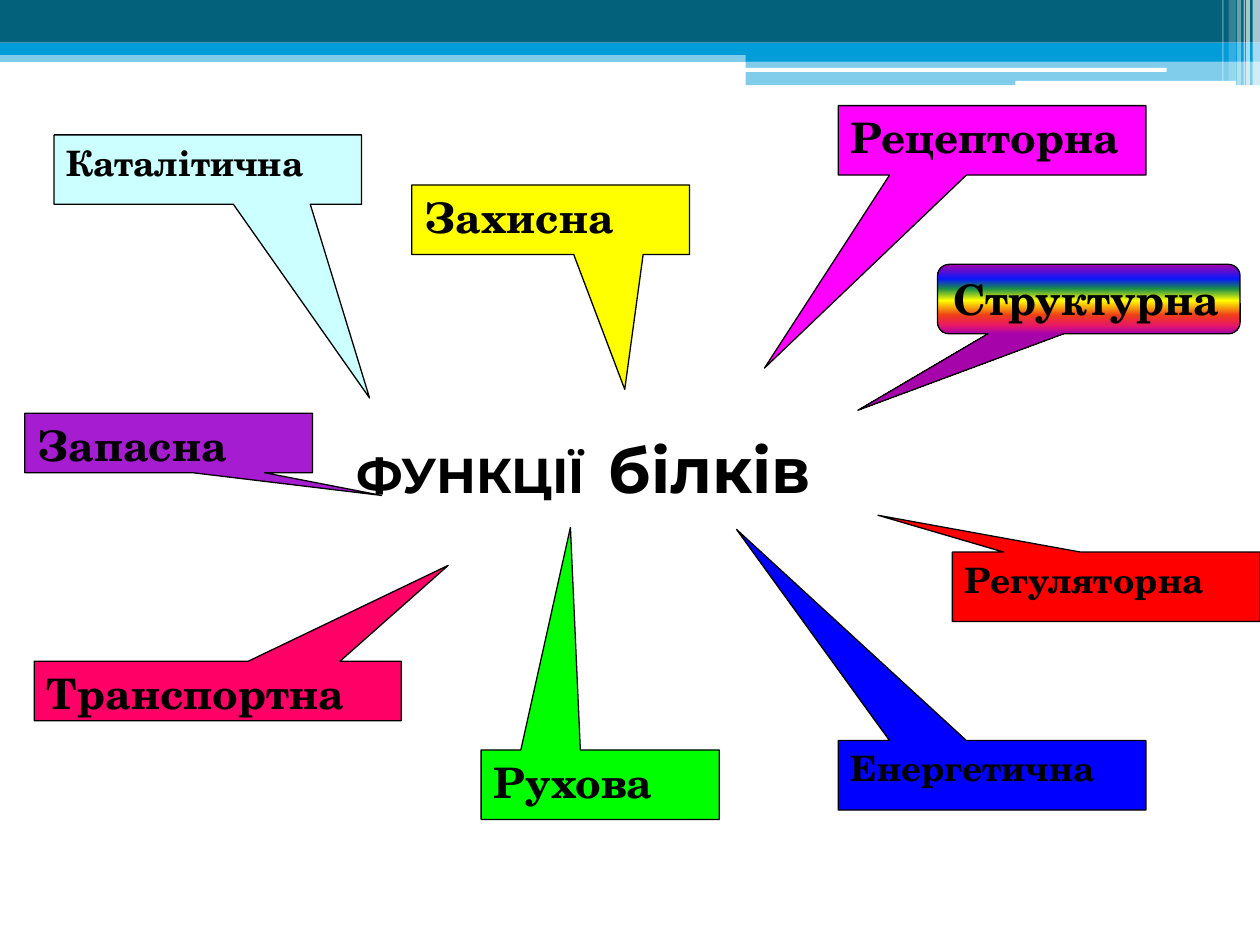
from lxml import etree
from pptx import Presentation
from pptx.dml.color import RGBColor
from pptx.enum import shapes, text
from pptx.oxml import ns
from pptx.util import Cm, Pt

SLIDE_WIDTH, SLIDE_HEIGHT = 25.4, 19.05
BLACK, WHITE = "000000", "FFFFFF"
DARK_TEAL, BLUE = "04617B", "009DD9"
RECT = shapes.MSO_SHAPE.RECTANGLE
ROUNDED = shapes.MSO_SHAPE.ROUNDED_RECTANGLE
CALLOUT = shapes.MSO_SHAPE.RECTANGULAR_CALLOUT
ROUNDED_CALLOUT = shapes.MSO_SHAPE.ROUNDED_RECTANGULAR_CALLOUT

# kind, left, top, width, height, colour, opacity in percent
HEADER_BANDS = [
    (RECT, 0, 1.02, 25.4, 0.23, BLUE, 50),
    (RECT, 0, 0, 25.4, 0.86, DARK_TEAL, 100),
    (RECT, 0, 0.86, 25.4, 0.25, BLUE, 100),
    (RECT, 15.03, 0.99, 10.37, 0.25, BLUE, 100),
    (RECT, 15.03, 1.22, 10.37, 0.5, BLUE, 50),
    (ROUNDED, 15.01, 1.37, 8.51, 0.08, WHITE, 100),
    (ROUNDED, 20.47, 1.63, 4.45, 0.1, WHITE, 100),
]
# left, width, height, opacity in percent
CORNER_STRIPES = [
    (25.25, 0.15, 1.73, 65),
    (25.12, 0.08, 1.73, 65),
    (25.07, 0.03, 1.73, 60),
    (24.94, 0.08, 1.73, 40),
    (24.77, 0.15, 1.63, 20),
    (24.64, 0.03, 1.63, 30),
]
RAINBOW = [(0, "A603AB"), (21, "0819FB"), (35, "1A8D48"), (52, "FFFF00"),
           (73, "EE3F17"), (88, "E81766"), (100, "A603AB")]
# label, text size, left, top, width, height, tail tip from the centre, fill
FUNCTIONS = [
    ("Структурна", 24, 18.9, 5.33, 6.1, 1.4, (-0.763, 1.601), RAINBOW),
    ("Каталітична", 20, 1.09, 2.72, 6.2, 1.4, (0.526, 3.289), "CCFFFF"),
    ("Регуляторна", 20, 19.2, 11.13, 6.2, 1.4, (-0.742, -1.03), "FF0000"),
    ("Рухова", 24, 9.7, 15.12, 4.8, 1.4, (-0.125, -3.705), "00FF00"),
    ("Транспортна", 24, 0.69, 13.33, 7.4, 1.2, (0.628, -2.11), "FF0066"),
    ("Захисна", 24, 8.3, 3.73, 5.6, 1.4, (0.267, 2.443), "FFFF00"),
    ("Запасна", 24, 0.5, 8.33, 5.8, 1.2, (0.74, 0.882), "A61DD1"),
    ("Енергетична", 20, 16.9, 14.93, 6.2, 1.4, (-0.831, -3.541), "0000FF"),
    ("Рецепторна", 24, 16.9, 2.13, 6.2, 1.4, (-0.74, 3.279), "FF00FF"),
]
TITLE_RUNS = [("ФУНКЦІЇ", 28), (" ", 48), ("білків", 36)]


def rgb(hex_colour):
    return RGBColor.from_string(hex_colour)


def fill_solid(shape, colour, opacity=100):
    shape.fill.solid()
    shape.fill.fore_color.rgb = rgb(colour)
    if opacity < 100:
        colour_node = shape.fill._xPr.find(".//" + ns.qn("a:srgbClr"))
        etree.SubElement(colour_node, ns.qn("a:alpha"), val=str(opacity * 1000))


def fill_gradient(shape, stops):
    """Fill from top to bottom with any number of (percent, colour) stops."""
    shape.fill.gradient()
    shape.fill.gradient_angle = 270
    stop_list = shape.fill._xPr.find(".//" + ns.qn("a:gsLst"))
    for old_stop in list(stop_list):
        stop_list.remove(old_stop)
    for percent, colour in stops:
        stop = etree.SubElement(stop_list, ns.qn("a:gs"), pos=str(percent * 1000))
        etree.SubElement(stop, ns.qn("a:srgbClr"), val=colour)


def style_run(run, font_name, size):
    run.font.name = font_name
    run.font.size = Pt(size)
    run.font.bold = True
    run.font.color.rgb = rgb(BLACK)


def add_band(slide, kind, left, top, width, height, colour, opacity):
    band = slide.shapes.add_shape(kind, Cm(left), Cm(top), Cm(width), Cm(height))
    band.shadow.inherit = False
    band.line.fill.background()
    fill_solid(band, colour, opacity)


def add_callout(slide, label, size, left, top, width, height, tip, fill):
    rainbow = fill is RAINBOW
    callout = slide.shapes.add_shape(ROUNDED_CALLOUT if rainbow else CALLOUT,
                                     Cm(left), Cm(top), Cm(width), Cm(height))
    callout.shadow.inherit = False
    callout.adjustments[0], callout.adjustments[1] = tip
    if rainbow:
        fill_gradient(callout, fill)
    else:
        fill_solid(callout, fill)
    callout.line.color.rgb = rgb(BLACK)
    callout.line.width = Pt(0.75)

    frame = callout.text_frame
    frame.text = label
    frame.vertical_anchor = text.MSO_ANCHOR.TOP
    paragraph = frame.paragraphs[0]
    paragraph.alignment = text.PP_ALIGN.LEFT
    style_run(paragraph.runs[0], "TeX Gyre Schola", size)


def add_title(slide):
    title = slide.shapes.add_textbox(Cm(4.09), Cm(8.13), Cm(19), Cm(2.29))
    frame = title.text_frame
    frame.word_wrap = True
    frame.margin_left = Cm(3.1)
    for words, size in TITLE_RUNS:
        run = frame.paragraphs[0].add_run()
        run.text = words
        style_run(run, "Montserrat", size)


def main():
    deck = Presentation()
    deck.slide_width, deck.slide_height = Cm(SLIDE_WIDTH), Cm(SLIDE_HEIGHT)
    slide = deck.slides.add_slide(deck.slide_layouts[6])
    for band in HEADER_BANDS:
        add_band(slide, *band)
    for left, width, height, opacity in CORNER_STRIPES:
        add_band(slide, RECT, left, 0, width, height, WHITE, opacity)
    add_title(slide)
    for function in FUNCTIONS:
        add_callout(slide, *function)
    deck.save("out.pptx")


if __name__ == "__main__":
    main()
